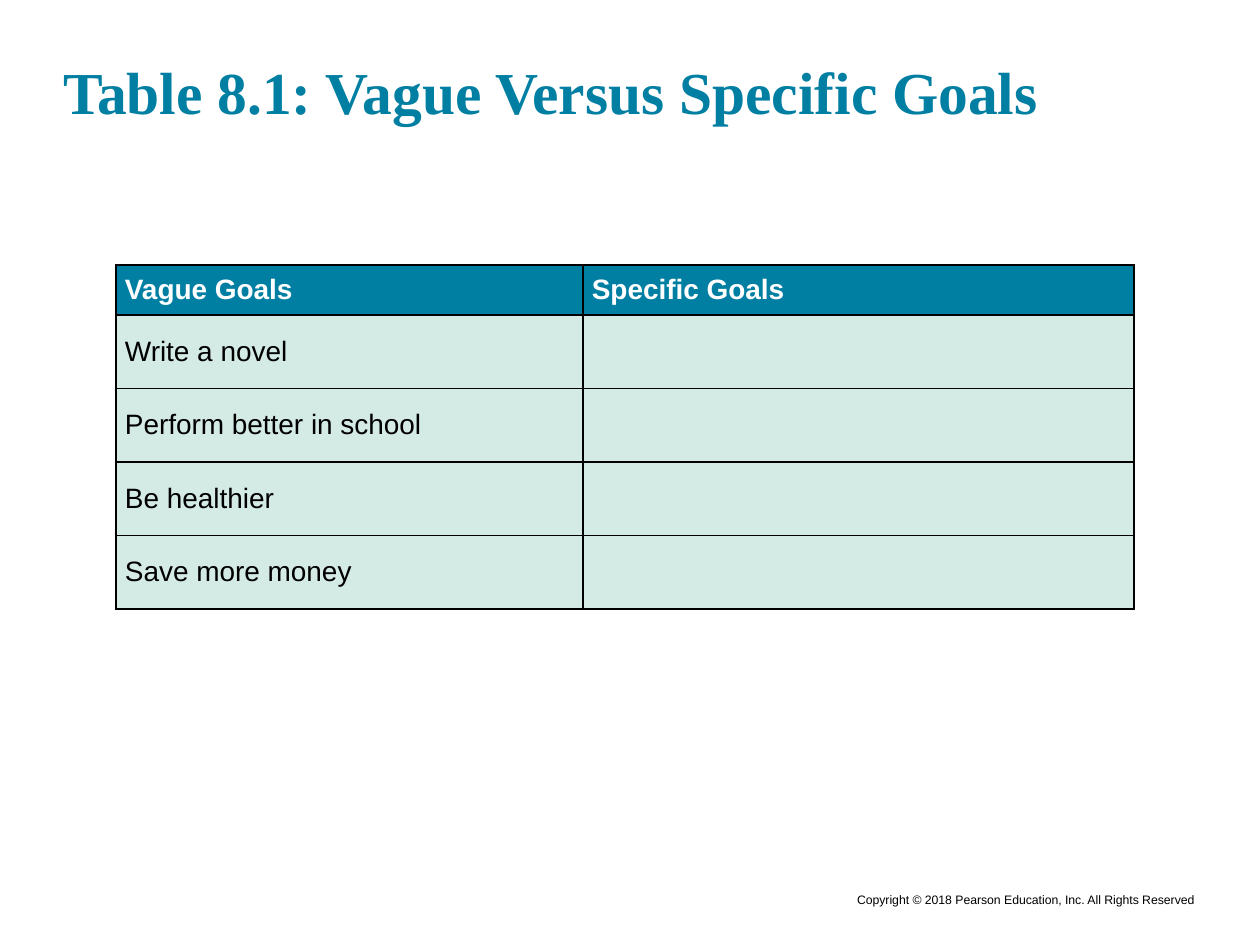
from pptx import Presentation
from pptx.dml.color import RGBColor
from pptx.enum import text
from pptx.oxml import parse_xml
from pptx.oxml.ns import nsdecls
from pptx.util import Pt

# Content
TITLE = "Table 8.1: Vague Versus Specific Goals"
ROWS = [
    ("Vague Goals", "Specific Goals"),
    ("Write a novel", ""),
    ("Perform better in school", ""),
    ("Be healthier", ""),
    ("Save more money", ""),
]
COPYRIGHT = "Copyright © 2018 Pearson Education, Inc. All Rights Reserved"

# Layout in px, 126 to the inch
PX = 914400 // 126
COLUMN_WIDTHS = (467, 551)
HEADER_HEIGHT, ROW_HEIGHT = 50, 73.5
TITLE_BOX = (63, 53, 1134, 73)
TABLE_AT = (116, 265)
COPYRIGHT_BOX = (220, 886, 987, 28)

TEAL = RGBColor(0x00, 0x7F, 0xA3)
MINT = RGBColor(0xD4, 0xEA, 0xE4)
WHITE = RGBColor(0xFF, 0xFF, 0xFF)
BLACK = RGBColor(0x00, 0x00, 0x00)


def px(*values):
    return [int(v * PX) for v in values]


def set_margins(obj, x, y):
    obj.margin_left = obj.margin_right = int(x * PX)
    obj.margin_top = obj.margin_bottom = int(y * PX)


def add_run(p, content, size, color, bold=False, name="Arial"):
    r = p.add_run()
    r.text = content
    r.font.size, r.font.bold, r.font.name = Pt(size), bold, name
    r.font.color.rgb = color


def add_borders(cell):
    tc_pr = cell._tc.get_or_add_tcPr()
    for i, side in enumerate(("lnL", "lnR", "lnT", "lnB")):
        tc_pr.insert(i, parse_xml(
            f'<a:{side} {nsdecls("a")} w="{Pt(1)}"><a:solidFill>'
            f'<a:srgbClr val="{BLACK}"/></a:solidFill></a:{side}>'))


prs = Presentation()
prs.slide_width, prs.slide_height = px(1260, 945)
s = prs.slides.add_slide(prs.slide_layouts[5])

# Title
title = s.shapes.title
title.left, title.top, title.width, title.height = px(*TITLE_BOX)
tf = title.text_frame
tf.auto_size = text.MSO_AUTO_SIZE.NONE
tf.word_wrap = True
tf.vertical_anchor = text.MSO_ANCHOR.BOTTOM
set_margins(tf, 0, 0)
p = tf.paragraphs[0]
p.alignment = text.PP_ALIGN.LEFT
add_run(p, TITLE, 34, TEAL, True, "Times New Roman")

# Goals table
heights = [HEADER_HEIGHT] + [ROW_HEIGHT] * (len(ROWS) - 1)
table = s.shapes.add_table(len(ROWS), len(COLUMN_WIDTHS), *px(
    *TABLE_AT, sum(COLUMN_WIDTHS), sum(heights))).table
for column, width in zip(table.columns, px(*COLUMN_WIDTHS)):
    column.width = width
for row, height in zip(table.rows, px(*heights)):
    row.height = height
for i, row in enumerate(ROWS):
    header = i == 0
    for j, content in enumerate(row):
        cell = table.cell(i, j)
        cell.vertical_anchor = text.MSO_ANCHOR.MIDDLE
        set_margins(cell, 9, 5)
        cell.fill.solid()
        cell.fill.fore_color.rgb = TEAL if header else MINT
        add_borders(cell)
        if content:
            add_run(cell.text_frame.paragraphs[0], content, 16,
                    WHITE if header else BLACK, header)

# Copyright line
tf = s.shapes.add_textbox(*px(*COPYRIGHT_BOX)).text_frame
tf.word_wrap = True
set_margins(tf, 12.6, 6.3)
p = tf.paragraphs[0]
p.alignment = text.PP_ALIGN.RIGHT
add_run(p, COPYRIGHT, 7, BLACK)

prs.save("out.pptx")
